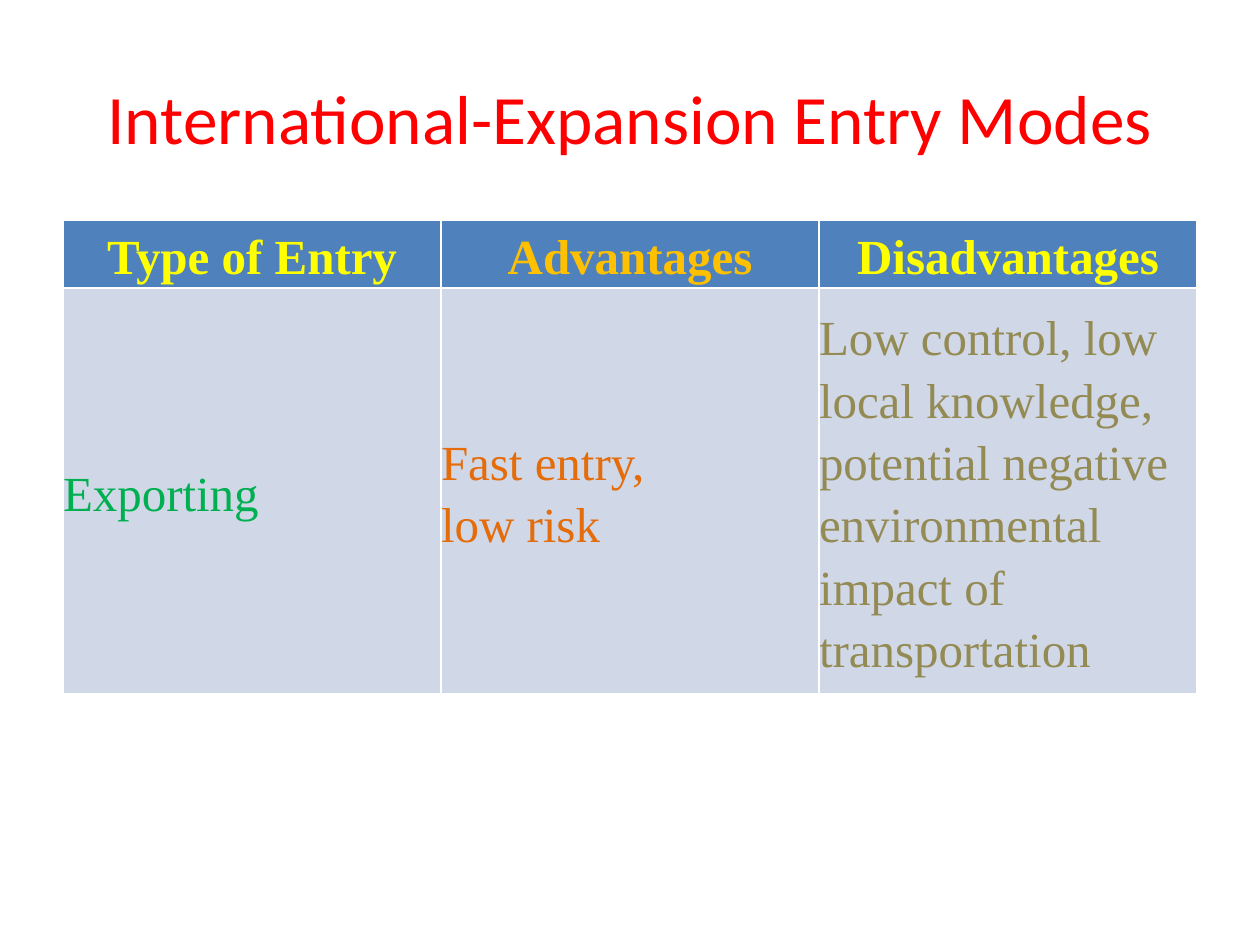
from dataclasses import dataclass

from pptx import Presentation
from pptx.dml.color import RGBColor
from pptx.enum.text import MSO_ANCHOR, PP_ALIGN
from pptx.util import Inches, Pt

MIDDLE = MSO_ANCHOR.MIDDLE
LEFT, CENTER = PP_ALIGN.LEFT, PP_ALIGN.CENTER

# Content: each column has a heading, its colour, a body text and its colour
TITLE = "International-Expansion Entry Modes"
COLUMNS = [
    ("Type of Entry", "FFFF00", "Exporting", "00B050"),
    ("Advantages", "FFC000", "Fast entry,\nlow risk", "E46C0A"),
    ("Disadvantages", "FFFF00",
     "Low control, low local knowledge, potential negative "
     "environmental impact of transportation", "948A54"),
]


@dataclass(frozen=True)
class Theme:
    title_font: str = "Calibri"
    title_size: float = 39.6
    title_color: str = "FF0000"
    table_font: str = "Times New Roman"
    table_size: float = 28
    line_spacing: float = 1.15
    header_fill: str = "4F81BD"
    body_fill: str = "D0D8E8"


THEME = Theme()
WIDTH, HEIGHT = Inches(10), Inches(7.5)
MARGIN = int(WIDTH * 0.05)
CONTENT_WIDTH = WIDTH - 2 * MARGIN
TITLE_TOP, TITLE_HEIGHT = int(HEIGHT * 0.04), Inches(1.25)
TABLE_TOP, ROW_HEIGHT = Inches(1.75), Inches(0.41)


def write(frame, text, font, size, color, align, bold=False, spacing=None):
    frame.text = text
    for para in frame.paragraphs:
        para.alignment = align
        para.line_spacing = spacing
        for span in para.runs:
            span.font.name = font
            span.font.size = Pt(size)
            span.font.bold = bold
            span.font.color.rgb = RGBColor.from_string(color)


def fill_cell(cell, text, color, fill, align, bold):
    cell.margin_left = cell.margin_right = 0
    cell.margin_top = cell.margin_bottom = 0
    cell.vertical_anchor = MIDDLE
    cell.fill.solid()
    cell.fill.fore_color.rgb = RGBColor.from_string(fill)
    write(cell.text_frame, text, THEME.table_font, THEME.table_size, color,
          align, bold, THEME.line_spacing)


deck = Presentation()
deck.slide_width, deck.slide_height = WIDTH, HEIGHT
page = deck.slides.add_slide(deck.slide_layouts[6])

# Title
box = page.shapes.add_textbox(MARGIN, TITLE_TOP, CONTENT_WIDTH, TITLE_HEIGHT)
box.text_frame.word_wrap = True
box.text_frame.vertical_anchor = MIDDLE
write(box.text_frame, TITLE, THEME.title_font, THEME.title_size,
      THEME.title_color, CENTER)

# Table: the default style supplies the white rules; rows grow with their text
table = page.shapes.add_table(2, len(COLUMNS), MARGIN, TABLE_TOP,
                              CONTENT_WIDTH, 2 * ROW_HEIGHT).table
for index, (heading, heading_color, body, body_color) in enumerate(COLUMNS):
    fill_cell(table.cell(0, index), heading, heading_color,
              THEME.header_fill, CENTER, True)
    fill_cell(table.cell(1, index), body, body_color,
              THEME.body_fill, LEFT, False)

deck.save("out.pptx")
